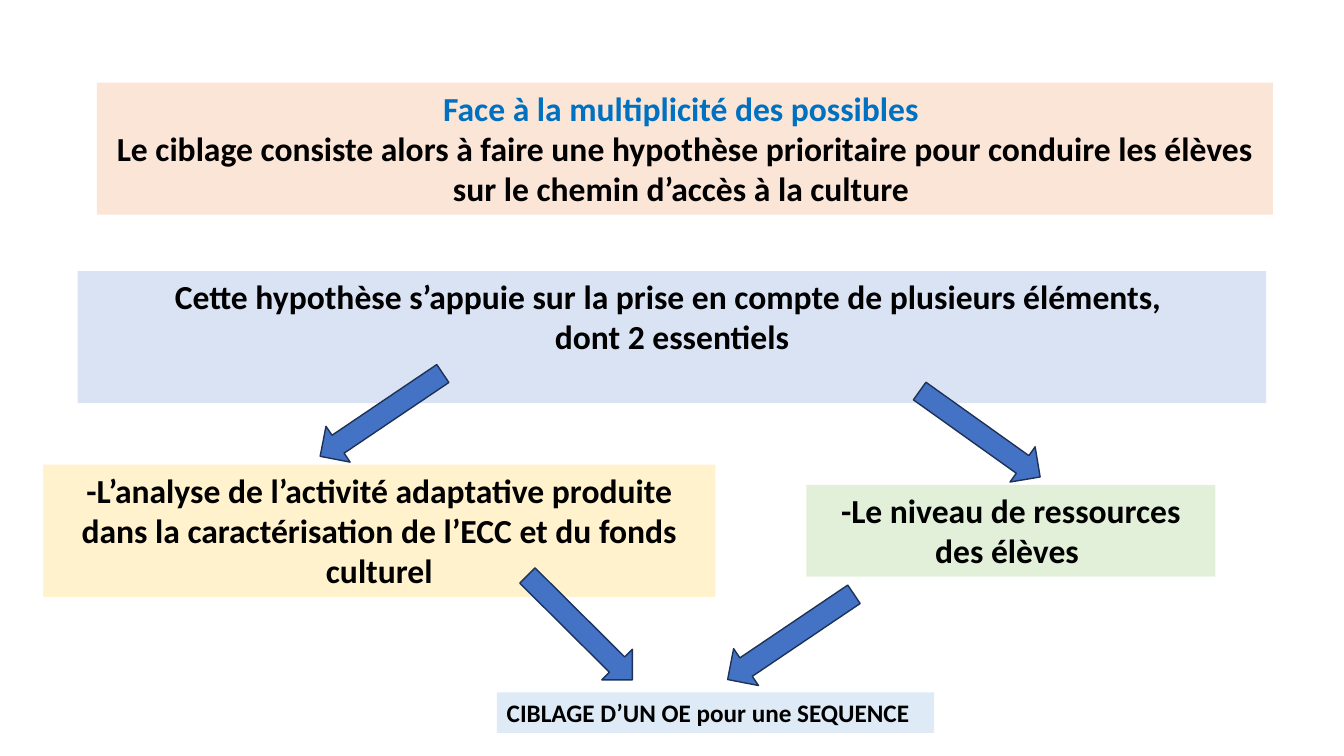
from pptx import Presentation
from pptx.dml.color import RGBColor
from pptx.enum.shapes import MSO_SHAPE
from pptx.enum.text import MSO_ANCHOR, PP_ALIGN
from pptx.util import Cm, Pt

LEFT_ARROW = MSO_SHAPE.LEFT_ARROW
RECTANGLE = MSO_SHAPE.RECTANGLE
CENTER, LEFT = PP_ALIGN.CENTER, PP_ALIGN.LEFT
TOP = MSO_ANCHOR.TOP

COLORS = {
    "black": "000000",
    "heading": "0070C0",
    "blue": "DAE3F3",
    "orange": "FBE5D6",
    "green": "E2F0D9",
    "yellow": "FFF2CC",
    "pale blue": "DEEBF7",
    "arrow": "4472C4",
    "arrow line": "1E3256",
}


def color(name):
    return RGBColor.from_string(COLORS[name])


def add_filled_shape(page, kind, place, fill):
    shape = page.shapes.add_shape(kind, *[Cm(length) for length in place])
    shape.shadow.inherit = False
    shape.fill.solid()
    shape.fill.fore_color.rgb = color(fill)
    return shape


deck = Presentation()
deck.slide_width, deck.slide_height = Cm(33.87), Cm(19.05)
page = deck.slides.add_slide(deck.slide_layouts[6])

# Boxes: place (left, top, width, height), fill, size, alignment, lines
boxes = [
    ((1.96, 6.83, 29.95, 3.33), "blue", 24, CENTER, [
        ("Cette hypothèse s’appuie sur la prise en compte de plusieurs éléments, ", "black"),
        ("dont 2 essentiels", "black"),
    ]),
    ((2.44, 2.08, 29.64, 3.33), "orange", 24, CENTER, [
        ("Face à la multiplicité des possibles ", "heading"),
        ("Le ciblage consiste alors à faire une hypothèse prioritaire pour conduire "
         "les élèves sur le chemin d’accès à la culture ", "black"),
    ]),
    ((20.32, 12.22, 10.31, 2.31), "green", 24, CENTER, [
        ("-Le niveau de ressources des élèves ", "black"),
    ]),
    ((1.09, 11.71, 16.94, 3.33), "yellow", 24, CENTER, [
        ("-L’analyse de l’activité adaptative produite dans la caractérisation "
         "de l’ECC et du fonds culturel", "black"),
    ]),
    ((12.52, 17.45, 11.02, 1.02), "pale blue", 18, LEFT, [
        ("CIBLAGE D’UN OE pour une SEQUENCE", "black"),
    ]),
]
for place, fill, size, alignment, lines in boxes:
    box = add_filled_shape(page, RECTANGLE, place, fill)
    box.line.fill.background()
    frame = box.text_frame
    frame.word_wrap = True
    frame.vertical_anchor = TOP
    for index, (text, text_color) in enumerate(lines):
        para = frame.add_paragraph() if index else frame.paragraphs[0]
        para.text = text
        para.alignment = alignment
        para.font.name = "Calibri"
        para.font.size = Pt(size)
        para.font.bold = True
        para.font.color.rgb = color(text_color)

# Arrows: place, rotation in degrees
arrows = [
    ((7.75, 9.91, 3.73, 1.09), 326),
    ((22.83, 10.39, 3.73, 1.09), 215.5),
    ((12.75, 15.27, 3.73, 1.09), 224.8),
    ((18.01, 15.49, 3.84, 1.12), 326),
]
for place, rotation in arrows:
    arrow = add_filled_shape(page, LEFT_ARROW, place, "arrow")
    arrow.rotation = rotation
    arrow.line.color.rgb = color("arrow line")
    arrow.line.width = Pt(1)

deck.save("out.pptx")
